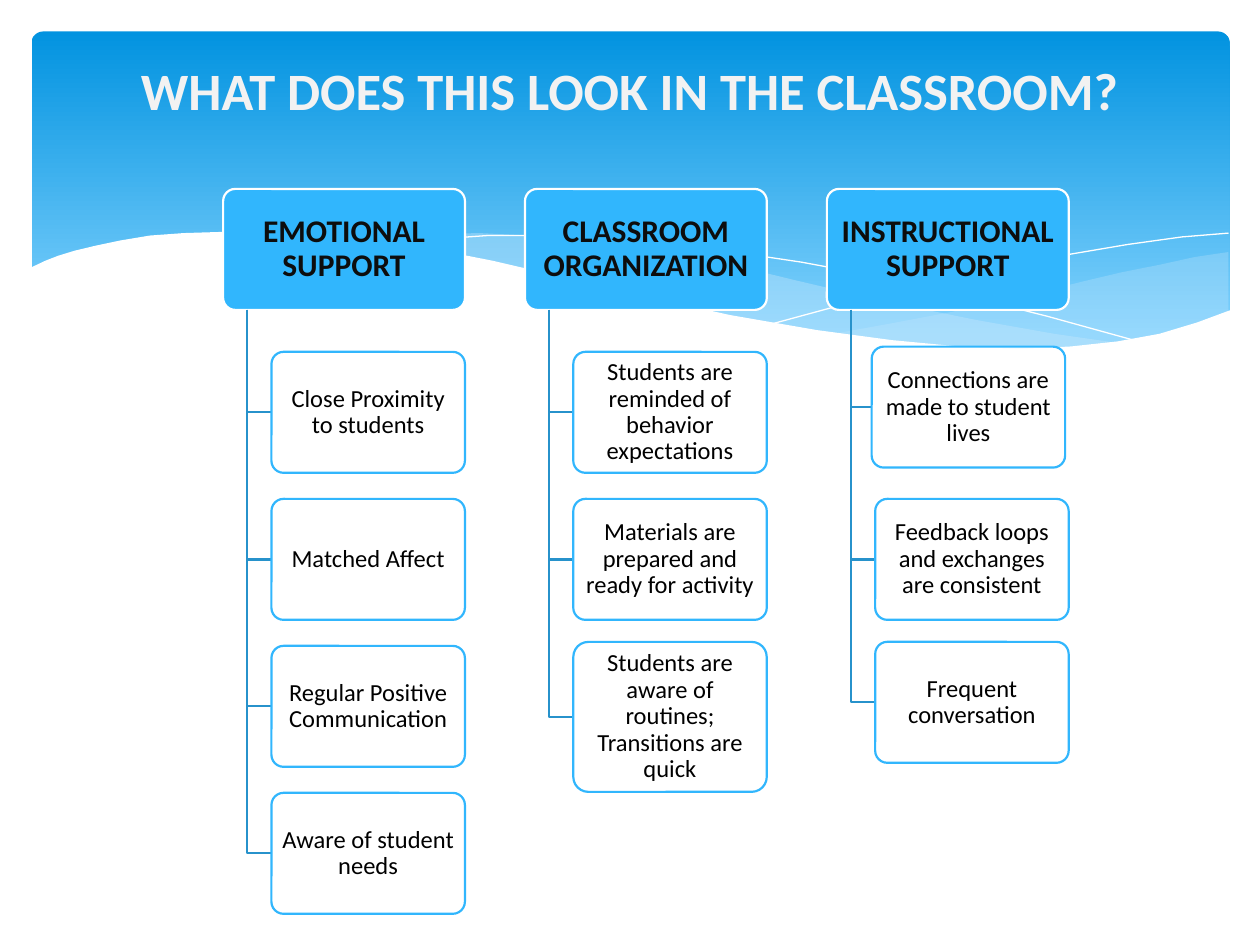
from dataclasses import dataclass

from lxml.etree import SubElement
from pptx import Presentation
from pptx.dml.color import RGBColor
from pptx.enum.shapes import MSO_SHAPE
from pptx.enum.text import MSO_ANCHOR, PP_ALIGN
from pptx.oxml.ns import qn
from pptx.util import Pt


@dataclass(frozen=True)
class Theme:
    font: str = "Calibri"
    white: str = "FFFFFF"
    title: str = "F2F2F2"
    header_text: str = "0D0D0D"
    leaf_text: str = "000000"
    accent: str = "31B6FD"
    branch: str = "2792CB"
    banner_top: str = "0293E0"
    banner_bottom: str = "83D3FE"
    mist: str = "C6E7FC"
    title_size: float = 30
    header_size: float = 18
    leaf_size: float = 14
    line: float = 1.25


THEME = Theme()

# Wave outlines, in points from the banner's top-left corner
BACK_WAVE = [
    (684, 126), (664.6, 128.9), (645.1, 133.2), (623.5, 137.5), (601.9, 142.6),
    (561.6, 152.6), (524.2, 160.6), (490.3, 167), (457.9, 172.8), (479.5, 175.7),
    (499.7, 177.8), (527, 180.7), (560.2, 182.2), (589.7, 181.4), (616.3, 178.6),
    (639.4, 174.2), (660.2, 168.5), (684, 159.8)]
MIDDLE_WAVE = [
    (625, 178.6), (584.6, 172.8), (540, 164.9), (490.3, 154.8), (434.9, 141.8),
    (402.5, 133.9), (371.5, 128.2), (343.4, 123.1), (316.8, 119.5), (284.4, 116.6),
    (255.6, 115.2), (229.7, 115.9), (207.4, 117.4), (187.9, 119.5), (214.6, 123.1),
    (242.6, 128.2), (272.9, 133.9), (305.3, 141.8), (363.6, 154.8), (414.7, 165.6),
    (460.8, 173.5), (501.8, 179.3), (538.6, 181.4), (571, 182.2), (599, 181.4)]
LONG_CREST = [
    (204.5, 122.4), (229.7, 118.8), (260.6, 116.6), (293.8, 116.6), (334.1, 118.8),
    (365.8, 121.7), (401, 126), (439.9, 131.8), (482.4, 139.7), (529.2, 149.8),
    (580.3, 162.7), (635, 177.8)]
SHORT_CREST = [
    (423.4, 167), (465.8, 155.5), (500.4, 146.9), (540.7, 137.5), (583.9, 128.9),
    (626.4, 121.7), (657.4, 117.4), (684, 115.2)]
FRONT_WAVE = [
    (685.4, 159.1), (666, 166.3), (644.4, 172.8), (620.6, 177.1), (594, 180),
    (564.5, 181.4), (529.9, 180), (491.8, 176.4), (448.6, 170.6), (398.9, 162),
    (344.2, 149.8), (303.8, 140.4), (263.5, 131), (226.8, 123.8), (192.2, 118.8),
    (162, 115.9), (133.9, 114.5), (109.4, 114.5), (87.1, 115.2), (67.7, 116.6),
    (50.4, 119.5), (36.7, 122.4), (24.5, 125.3), (15.1, 128.2), (7.9, 131),
    (-1.4, 135.4), (-1.4, 218.9), (685.4, 218.9)]

# Each leaf: text, then any departure from the regular grid
COLUMNS = [
    ("EMOTIONAL SUPPORT", [
        ("Close Proximity to students", {}),
        ("Matched Affect", {}),
        ("Regular Positive Communication", {}),
        ("Aware of student needs", {})]),
    ("CLASSROOM ORGANIZATION", [
        ("Students are reminded of behavior expectations", {}),
        ("Materials are prepared and ready for activity", {}),
        ("Students are aware of routines; Transitions are quick",
         {"dy": -2.3, "height": 85.7})]),
    ("INSTRUCTIONAL SUPPORT", [
        ("Connections are made to student lives", {"dx": -2, "dy": -3}),
        ("Feedback loops and exchanges are consistent", {}),
        ("Frequent conversation", {"dy": -2.3})]),
]


def paint(sp, fill=None, line=None, width=THEME.line, opacity=None):
    """Set fill and line; a missing colour means none."""
    sp.shadow.inherit = False
    if fill:
        sp.fill.solid()
        sp.fill.fore_color.rgb = RGBColor.from_string(fill)
        if opacity:
            color = sp.fill._xPr.find(".//" + qn("a:srgbClr"))
            SubElement(color, qn("a:alpha")).set("val", str(opacity * 1000))
    else:
        sp.fill.background()
    if line:
        sp.line.color.rgb = RGBColor.from_string(line)
        sp.line.width = Pt(width)
    else:
        sp.line.fill.background()


def write(sp, text, size, color, bold=False, spacing=0.9, margin=(4, 3.5)):
    """Centre one paragraph in a shape."""
    tf = sp.text_frame
    mx, my = map(Pt, margin)
    frame = {"word_wrap": True, "vertical_anchor": MSO_ANCHOR.MIDDLE,
             "margin_left": mx, "margin_right": mx,
             "margin_top": my, "margin_bottom": my}
    p = tf.paragraphs[0]
    r = p.add_run()
    r.text = text
    formats = [(tf, frame),
               (p, {"alignment": PP_ALIGN.CENTER, "line_spacing": spacing}),
               (r.font, {"name": THEME.font, "size": Pt(size), "bold": bold})]
    for target, values in formats:
        for name, value in values.items():
            setattr(target, name, value)
    r.font.color.rgb = RGBColor.from_string(color)


def add_outline(s, points, origin=(0, 0), close=False, **style):
    x0, y0 = origin
    pts = [(Pt(x0 + x), Pt(y0 + y)) for x, y in points]
    builder = s.shapes.build_freeform(*pts[0], scale=1.0)
    builder.add_line_segments(pts[1:], close=close)
    paint(builder.convert_to_shape(), **style)


def add_round_box(s, box, radius=0.1):
    sp = s.shapes.add_shape(MSO_SHAPE.ROUNDED_RECTANGLE, *map(Pt, box))
    sp.adjustments[0] = radius
    return sp


def add_banner(s, box):
    sp = add_round_box(s, box, radius=0.034)
    paint(sp)
    sp.fill.gradient()
    sp.fill.gradient_angle = 270
    stops = [(0, THEME.banner_top), (0.9, THEME.banner_bottom)]
    for stop, (position, color) in zip(sp.fill.gradient_stops, stops):
        stop.position = position
        stop.color.rgb = RGBColor.from_string(color)

    origin = box[:2]
    add_outline(s, BACK_WAVE, origin, True, fill=THEME.mist, opacity=29)
    add_outline(s, MIDDLE_WAVE, origin, True, fill=THEME.mist, opacity=40)
    for crest in (LONG_CREST, SHORT_CREST):
        add_outline(s, crest, origin, line=THEME.white, width=0)
    add_outline(s, FRONT_WAVE, origin, True, fill=THEME.white)


def add_title(s, box, text):
    sp = s.shapes.add_textbox(*map(Pt, box))
    write(sp, text, THEME.title_size, THEME.title, bold=True, spacing=1.0,
          margin=(7.2, 3.6))


def add_column(s, box, header, leaves):
    """Draw a header box with its leaves hanging from a trunk line."""
    x, y, w, h = box
    sp = add_round_box(s, box)
    paint(sp, fill=THEME.accent, line=THEME.white)
    write(sp, header, THEME.header_size, THEME.header_text, bold=True, margin=(5, 4))

    trunk, bottom = x + 0.1 * w, y + h
    for i, (text, shift) in enumerate(leaves):
        left = x + 0.2 * w + shift.get("dx", 0)
        top = bottom + 24 + 84 * i + shift.get("dy", 0)
        height = shift.get("height", h)
        middle = top + height / 2
        add_outline(s, [(trunk, bottom), (trunk, middle), (left, middle)],
                    line=THEME.branch)
        leaf = add_round_box(s, (left, top, 0.8 * w, height))
        paint(leaf, fill=THEME.white, line=THEME.accent, opacity=90)
        write(leaf, text, THEME.leaf_size, THEME.leaf_text)


def main():
    prs = Presentation()
    prs.slide_width, prs.slide_height = Pt(720), Pt(540)
    s = prs.slides.add_slide(prs.slide_layouts[6])
    add_banner(s, (18, 18, 684.7, 194.4))
    add_title(s, (36, 6, 648, 90), "WHAT DOES THIS LOOK IN THE CLASSROOM?")
    for i, (header, leaves) in enumerate(COLUMNS):
        add_column(s, (127.5 + 172.5 * i, 108, 138.2, 69.1), header, leaves)
    prs.save("out.pptx")


if __name__ == "__main__":
    main()
